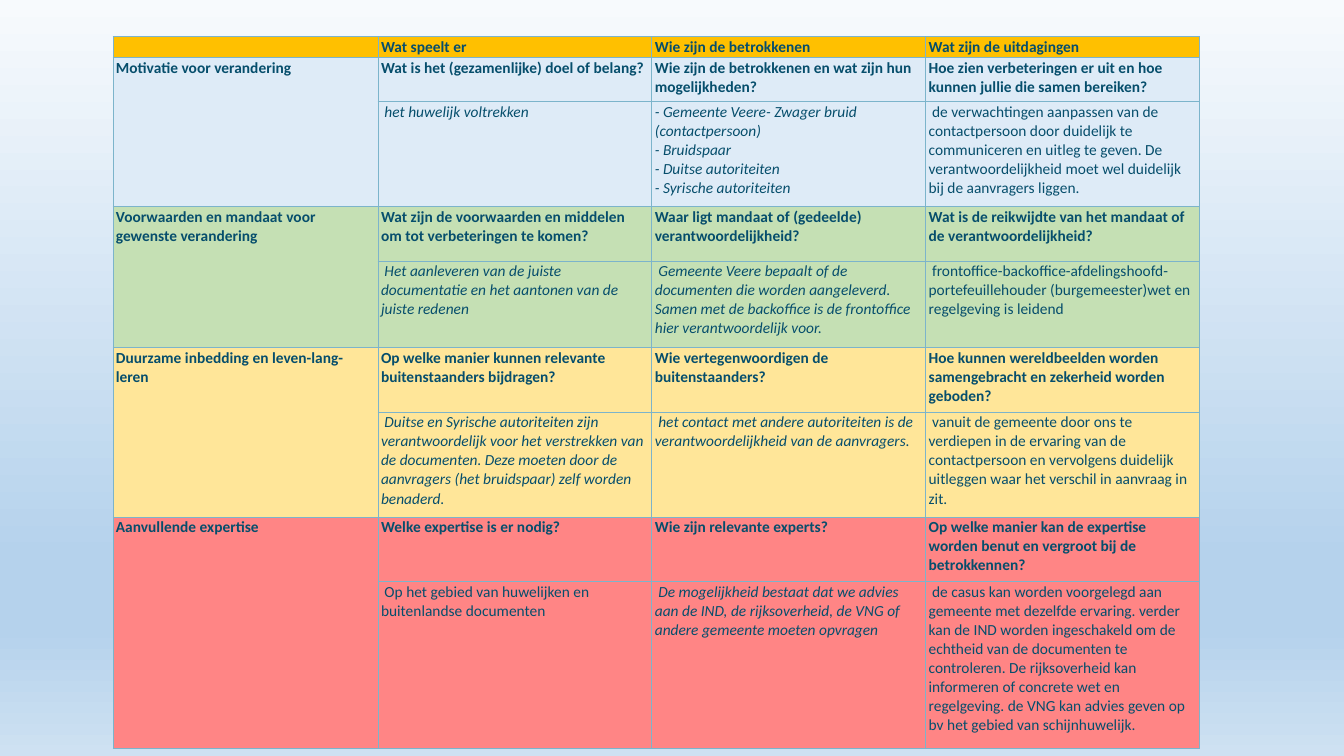
import lxml.etree
import pptx
import pptx.dml.color
import pptx.oxml.ns
import pptx.util

Pt = pptx.util.Pt
qn = pptx.oxml.ns.qn

TEXT, BORDER, HEADER_FILL = "064E6C", "7CB4CB", "FFC000"
BACKGROUND_STOPS = [(0, "F7FAFD"), (74, "B5D2EC"), (83, "B5D2EC"), (100, "CEE1F2")]
COLUMN_WIDTHS = [189.4, 195.6, 195.6, 195.6]
ROW_HEIGHTS = [15, 31.7, 74.9, 38.9, 61.9, 46.1, 74.9, 46.1, 118.8]
HEADINGS = ["", "Wat speelt er", "Wie zijn de betrokkenen", "Wat zijn de uitdagingen"]

THEMES = [
    ("Motivatie voor verandering", "DEEBF7",
     ["Wat is het (gezamenlijke) doel of belang?",
      "Wie zijn de betrokkenen en wat zijn hun mogelijkheden?",
      "Hoe zien verbeteringen er uit en hoe kunnen jullie die samen bereiken?"],
     [(" het huwelijk voltrekken", True),
      ("- Gemeente Veere- Zwager bruid (contactpersoon)\n- Bruidspaar\n"
       "- Duitse autoriteiten\n- Syrische autoriteiten", True),
      (" de verwachtingen aanpassen van de contactpersoon door duidelijk te "
       "communiceren en uitleg te geven. De verantwoordelijkheid moet wel duidelijk "
       "bij de aanvragers liggen.", False)]),
    ("Voorwaarden en mandaat voor gewenste verandering", "C5E0B4",
     ["Wat zijn de voorwaarden en middelen om tot verbeteringen te komen?",
      "Waar ligt mandaat of (gedeelde) verantwoordelijkheid?",
      "Wat is de reikwijdte van het mandaat of de verantwoordelijkheid?"],
     [(" Het aanleveren van de juiste documentatie en het aantonen van de juiste "
       "redenen", True),
      (" Gemeente Veere bepaalt of de documenten die worden aangeleverd. Samen met "
       "de backoffice is de frontoffice hier verantwoordelijk voor.", True),
      (" frontoffice-backoffice-afdelingshoofd-portefeuillehouder "
       "(burgemeester)wet en regelgeving is leidend", False)]),
    ("Duurzame inbedding en leven-lang-leren", "FFE699",
     ["Op welke manier kunnen relevante buitenstaanders bijdragen?",
      "Wie vertegenwoordigen de buitenstaanders?",
      "Hoe kunnen wereldbeelden worden samengebracht en zekerheid worden geboden?"],
     [(" Duitse en Syrische autoriteiten zijn verantwoordelijk voor het verstrekken "
       "van de documenten. Deze moeten door de aanvragers (het bruidspaar) zelf "
       "worden benaderd.", True),
      (" het contact met andere autoriteiten is de verantwoordelijkheid van de "
       "aanvragers.", True),
      (" vanuit de gemeente door ons te verdiepen in de ervaring van de "
       "contactpersoon en vervolgens duidelijk uitleggen waar het verschil in "
       "aanvraag in zit.", False)]),
    ("Aanvullende expertise", "FF8585",
     ["Welke expertise is er nodig?",
      "Wie zijn relevante experts?",
      "Op welke manier kan de expertise worden benut en vergroot bij de betrokkennen?"],
     [(" Op het gebied van huwelijken en buitenlandse documenten", False),
      (" De mogelijkheid bestaat dat we advies aan de IND, de rijksoverheid, de VNG "
       "of andere gemeente moeten opvragen", True),
      (" de casus kan worden voorgelegd aan gemeente met dezelfde ervaring. verder "
       "kan de IND worden ingeschakeld om de echtheid van de documenten te "
       "controleren. De rijksoverheid kan informeren of concrete wet en regelgeving. "
       "de VNG kan advies geven op bv het gebied van schijnhuwelijk.", False)]),
]


def color(hex_code):
    return pptx.dml.color.RGBColor.from_string(hex_code)


def paint_background(slide):
    fill = slide.background.fill
    fill.gradient()
    fill.gradient_angle = 270
    stops = slide.element.find(".//" + qn("a:gsLst"))
    for stop in list(stops):
        stops.remove(stop)
    for percent, hex_code in BACKGROUND_STOPS:
        stop = lxml.etree.SubElement(stops, qn("a:gs"), pos=str(percent * 1000))
        lxml.etree.SubElement(stop, qn("a:srgbClr"), val=hex_code)


def style_cell(cell, fill):
    cell.margin_left = cell.margin_right = Pt(2.2)
    cell.margin_top = cell.margin_bottom = Pt(0.7)
    properties = cell._tc.get_or_add_tcPr()
    for side in ("lnL", "lnR", "lnT", "lnB"):
        line = lxml.etree.SubElement(properties, qn("a:" + side), w=str(Pt(0.5)))
        solid = lxml.etree.SubElement(line, qn("a:solidFill"))
        lxml.etree.SubElement(solid, qn("a:srgbClr"), val=BORDER)
    cell.fill.solid()
    cell.fill.fore_color.rgb = color(fill)


def write_cell(cell, text, bold=False, italic=False):
    cell.text_frame.text = text
    for paragraph in cell.text_frame.paragraphs:
        if not paragraph.runs:
            lxml.etree.SubElement(paragraph._p, qn("a:endParaRPr"), sz="1100")
        for run in paragraph.runs:
            run.font.name = "Calibri"
            run.font.size = Pt(11)
            run.font.bold = bold
            run.font.italic = italic
            run.font.color.rgb = color(TEXT)


def add_theme(table, top_row, theme):
    title, fill, questions, answers = theme
    for row in (top_row, top_row + 1):
        for column in range(len(COLUMN_WIDTHS)):
            style_cell(table.cell(row, column), fill)
    title_cell = table.cell(top_row, 0)
    title_cell.merge(table.cell(top_row + 1, 0))
    write_cell(title_cell, title, bold=True)
    for column, (question, (answer, italic)) in enumerate(zip(questions, answers), 1):
        write_cell(table.cell(top_row, column), question, bold=True)
        write_cell(table.cell(top_row + 1, column), answer, italic=italic)


def add_matrix(slide, left, top):
    table = slide.shapes.add_table(
        len(ROW_HEIGHTS), len(COLUMN_WIDTHS), Pt(left), Pt(top),
        Pt(sum(COLUMN_WIDTHS)), Pt(sum(ROW_HEIGHTS))).table
    table.first_row = table.horz_banding = False
    for column, width in zip(table.columns, COLUMN_WIDTHS):
        column.width = Pt(width)
    for row, height in zip(table.rows, ROW_HEIGHTS):
        row.height = Pt(height)
    for column, heading in enumerate(HEADINGS):
        style_cell(table.cell(0, column), HEADER_FILL)
        write_cell(table.cell(0, column), heading, bold=True)
    for index, theme in enumerate(THEMES):
        add_theme(table, 1 + 2 * index, theme)


def main():
    presentation = pptx.Presentation()
    presentation.slide_width, presentation.slide_height = Pt(960), Pt(540)
    slide = presentation.slides.add_slide(presentation.slide_layouts[6])
    paint_background(slide)
    add_matrix(slide, 80.6, 26)
    presentation.save("out.pptx")


if __name__ == "__main__":
    main()
